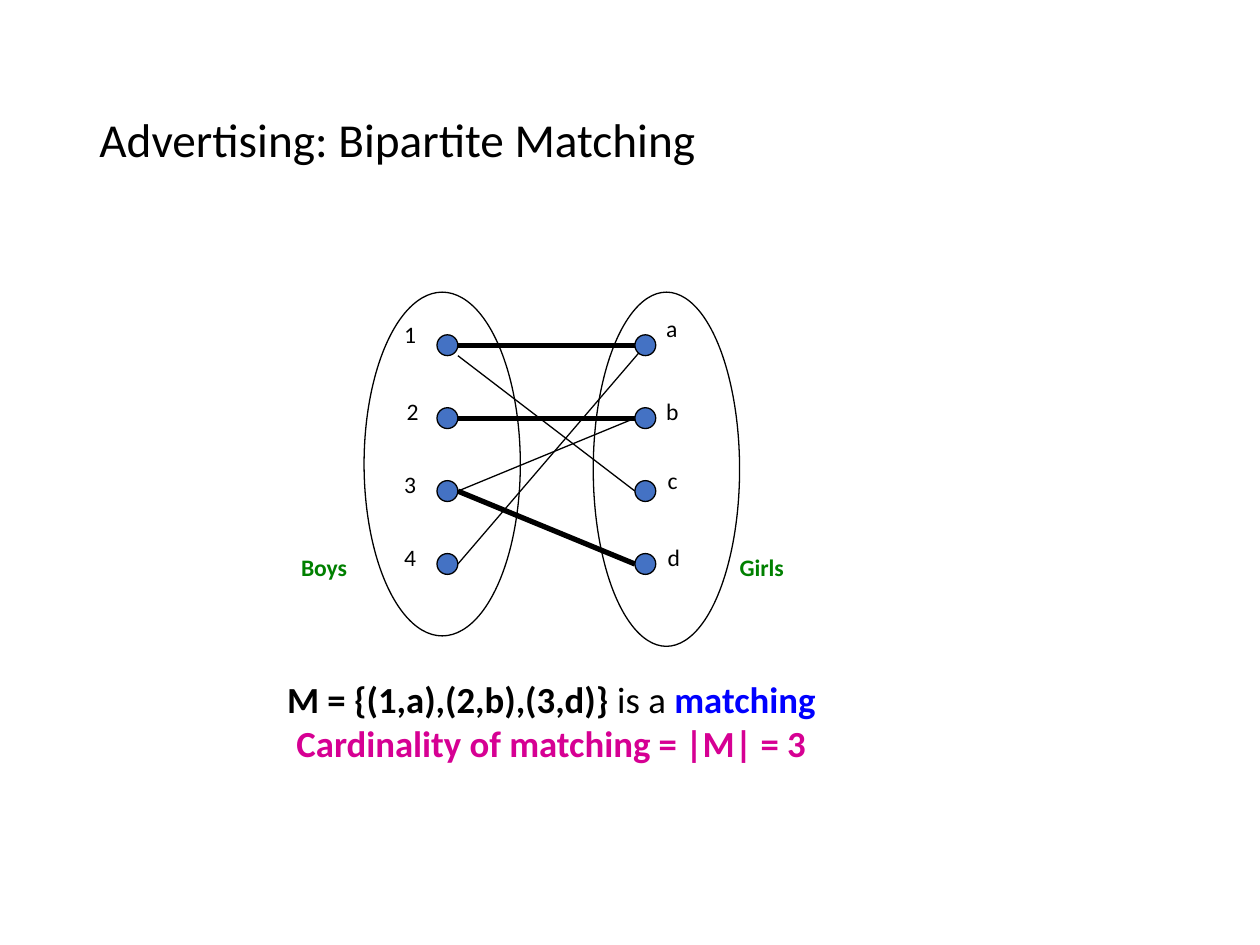
from dataclasses import dataclass

from lxml import etree
from pptx import Presentation
from pptx.dml.color import RGBColor
from pptx.enum.shapes import MSO_CONNECTOR, MSO_SHAPE
from pptx.enum.text import MSO_ANCHOR, MSO_AUTO_SIZE, PP_ALIGN
from pptx.oxml.ns import qn
from pptx.slide import Slide
from pptx.util import Cm, Pt

STRAIGHT = MSO_CONNECTOR.STRAIGHT
OVAL = MSO_SHAPE.OVAL
MIDDLE = MSO_ANCHOR.MIDDLE
NO_AUTOFIT = MSO_AUTO_SIZE.NONE
LEFT = PP_ALIGN.LEFT
CENTER = PP_ALIGN.CENTER

BLACK = RGBColor(0x00, 0x00, 0x00)
NODE_BLUE = RGBColor(0x44, 0x72, 0xC4)
TERM_BLUE = RGBColor(0x00, 0x00, 0xFF)
MAGENTA = RGBColor(0xD6, 0x00, 0x93)
GREEN = RGBColor(0x00, 0x80, 0x00)

NODE_SIZE = 0.42
BOY_LEFT = 8.81
GIRL_LEFT = 12.8
FIRST_TOP = 6.75
ROW_STEP = 1.47
THIN = 0.75
THICK = 3


@dataclass
class SlidePainter:
    """Draw styled elements on the current slide."""

    slide: Slide
    font_name: str = "Calibri"
    label_size: float = 13.5
    statement_size: float = 21

    def style_font(self, font, size, color=BLACK, bold=False):
        font.name = self.font_name
        font.size = Pt(size)
        font.bold = bold
        font.color.rgb = color

    def title(self, text, left, top, width, height):
        shape = self.slide.shapes.title
        shape.left, shape.top = Cm(left), Cm(top)
        shape.width, shape.height = Cm(width), Cm(height)
        frame = shape.text_frame
        frame.text = text
        frame.auto_size = NO_AUTOFIT
        frame.vertical_anchor = MIDDLE
        paragraph = frame.paragraphs[0]
        paragraph.alignment = LEFT
        paragraph.line_spacing = 0.9
        self.style_font(paragraph.font, 27)

    def text_frame(self, left, top, width, height):
        shape = self.slide.shapes.add_textbox(Cm(left), Cm(top), Cm(width), Cm(height))
        shape.text_frame.word_wrap = False
        return shape.text_frame

    def label(self, text, left, top, width=0.76, color=BLACK, bold=False):
        frame = self.text_frame(left, top, width, 0.84)
        frame.text = text
        self.style_font(frame.paragraphs[0].font, self.label_size, color, bold)

    def statement(self, lines, left, top, width, height):
        frame = self.text_frame(left, top, width, height)
        for index, line in enumerate(lines):
            paragraph = frame.add_paragraph() if index else frame.paragraphs[0]
            paragraph.alignment = CENTER
            for text, color, bold in line:
                run = paragraph.add_run()
                run.text = text
                self.style_font(run.font, self.statement_size, color, bold)

    def ellipse(self, left, top, width, height, fill=None):
        shape = self.slide.shapes.add_shape(OVAL, Cm(left), Cm(top), Cm(width), Cm(height))
        shape.shadow.inherit = False
        if fill is None:
            shape.fill.background()
        else:
            shape.fill.solid()
            shape.fill.fore_color.rgb = fill
        shape.line.color.rgb = BLACK
        shape.line.width = Pt(THIN)

    def edge(self, start, end, weight):
        points = [Cm(value) for value in (*start, *end)]
        connector = self.slide.shapes.add_connector(STRAIGHT, *points)
        connector.line.color.rgb = BLACK
        connector.line.width = Pt(weight)
        properties = connector._element.find(qn("p:spPr"))
        etree.SubElement(properties, qn("a:effectLst"))


def row_top(row):
    return FIRST_TOP + row * ROW_STEP


def row_middle(row):
    return row_top(row) + NODE_SIZE / 2


def draw_graph(painter):
    boy_edge = BOY_LEFT + NODE_SIZE
    for boy, girl in ((0, 0), (1, 1), (2, 3)):
        painter.edge((boy_edge, row_middle(boy)), (GIRL_LEFT, row_middle(girl)), THICK)
    painter.edge((boy_edge, row_top(0) + NODE_SIZE), (GIRL_LEFT, row_middle(2)), THIN)
    painter.edge((boy_edge, row_middle(2)), (GIRL_LEFT, row_middle(1)), THIN)
    painter.edge((boy_edge, row_middle(3)), (GIRL_LEFT + NODE_SIZE / 2, row_middle(0)), THIN)

    for row in range(4):
        for left in (BOY_LEFT, GIRL_LEFT):
            painter.ellipse(left, row_top(row), NODE_SIZE, NODE_SIZE, NODE_BLUE)

    painter.ellipse(7.34, 5.89, 3.15, 6.93)
    painter.ellipse(11.96, 5.89, 2.95, 7.14)

    for text, left, top in (
        ("1", 7.9, 6.32), ("2", 7.95, 7.87), ("3", 7.9, 9.35), ("4", 7.9, 10.82),
        ("a", 13.18, 6.2), ("b", 13.18, 7.87), ("c", 13.21, 9.27), ("d", 13.21, 10.82),
    ):
        painter.label(text, left, top)
    painter.label("Boys", 5.82, 11.02, 1.45, GREEN, True)
    painter.label("Girls", 14.66, 11.02, 1.42, GREEN, True)


def main():
    presentation = Presentation()
    presentation.slide_width = Cm(25.4)
    presentation.slide_height = Cm(19.05)
    painter = SlidePainter(presentation.slides.add_slide(presentation.slide_layouts[5]))
    painter.title("Advertising: Bipartite Matching", 1.75, 1.02, 21.9, 3.68)
    painter.statement(
        [
            [
                ("M = {(1,a),(2,b),(3,d)}", BLACK, True),
                (" is a ", BLACK, False),
                ("matching", TERM_BLUE, True),
            ],
            [("Cardinality of matching = |M| = 3", MAGENTA, True)],
        ],
        5.49, 13.51, 11.25, 2.06,
    )
    draw_graph(painter)
    presentation.save("out.pptx")


if __name__ == "__main__":
    main()
